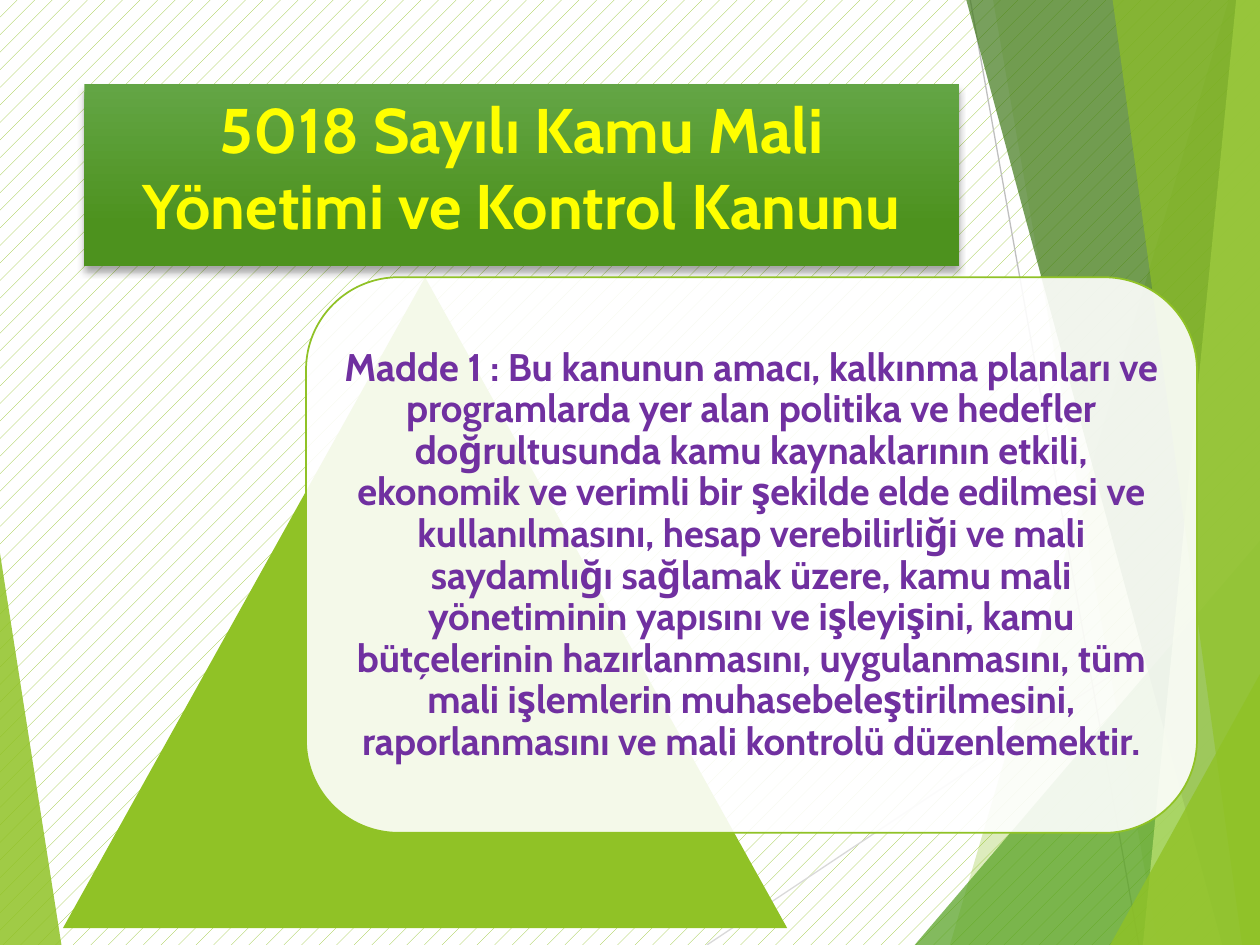
from dataclasses import dataclass

from lxml import etree
from pptx import Presentation
from pptx import util as u
from pptx.dml.color import RGBColor
from pptx.enum import dml, shapes, text
from pptx.oxml import ns

WIDTH, HEIGHT = 25.4, 19.05  # cm
CARD_TOP = 5.59
TRIANGLE_BASE = 18.71


@dataclass(frozen=True)
class Theme:
    font: str = "Cabin"
    title_size: int = 36
    body_size: int = 22
    white: str = "FFFFFF"
    lime: str = "90C226"
    pale_lime: str = "C0E474"
    green: str = "54A021"
    dark_green: str = "3F7819"
    title_top: str = "63A545"
    title_bottom: str = "4D921E"
    title_text: str = "FFFF00"
    body_text: str = "7030A0"
    light_grey: str = "D9D9D9"
    grey: str = "BFBFBF"
    black: str = "000000"


THEME = Theme()

TITLE = "5018 Sayılı Kamu Mali Yönetimi ve Kontrol Kanunu"
ARTICLE = (
    "Madde 1 : Bu kanunun amacı, kalkınma planları ve programlarda yer alan "
    "politika ve hedefler doğrultusunda kamu kaynaklarının etkili, ekonomik ve "
    "verimli bir şekilde elde edilmesi ve kullanılmasını, hesap verebilirliği ve "
    "mali saydamlığı sağlamak üzere, kamu mali yönetiminin yapısını ve "
    "işleyişini, kamu bütçelerinin hazırlanmasını, uygulanmasını, tüm mali "
    "işlemlerin muhasebeleştirilmesini, raporlanmasını ve mali kontrolü "
    "düzenlemektir."
)

# Thin lines behind the facets: start, end, colour
RAYS = [
    ((14.25, HEIGHT), (WIDTH, 11.61), THEME.light_grey),
    ((19.56, 0), (22.96, HEIGHT), THEME.grey),
]

# Facets: corner points, colour, opacity in percent
FACETS = [
    ([(0, 11.15), (1.24, HEIGHT), (0, HEIGHT)], THEME.lime, 85),
    ([(24.77, 0), (19.15, HEIGHT), (WIDTH, HEIGHT), (WIDTH, 0)], THEME.lime, 30),
    ([(20.02, 0), (23.34, HEIGHT), (WIDTH, HEIGHT), (WIDTH, 0)], THEME.lime, 20),
    ([(18.44, HEIGHT), (WIDTH, 10.9), (WIDTH, HEIGHT)], THEME.green, 72),
    ([(19.48, 0), (24.64, HEIGHT), (WIDTH, HEIGHT), (WIDTH, 0)], THEME.dark_green, 70),
    ([(24.92, 0), (23.04, HEIGHT), (WIDTH, HEIGHT), (WIDTH, 0)], THEME.pale_lime, 70),
    ([(22.43, 0), (25.04, HEIGHT), (WIDTH, HEIGHT), (WIDTH, 0)], THEME.lime, 65),
    ([(22.38, HEIGHT), (WIDTH, 13.59), (WIDTH, HEIGHT)], THEME.lime, 80),
]


def rgb(code):
    return RGBColor.from_string(code)


def lengths(*values):
    return [u.Cm(value) for value in values]


def fill_solid(shape, color, opacity=100):
    shape.shadow.inherit = False
    shape.fill.solid()
    shape.fill.fore_color.rgb = rgb(color)
    if opacity < 100:
        tint = shape._element.spPr.find(ns.qn("a:solidFill"))[0]
        etree.SubElement(tint, ns.qn("a:alpha"), val=str(opacity * 1000))


def set_background(page):
    fill = page.background.fill
    fill.patterned()
    fill.pattern = dml.MSO_PATTERN.PERCENT_5
    fill.fore_color.rgb = rgb(THEME.lime)
    fill.back_color.rgb = rgb(THEME.white)


def add_ray(page, start, end, color):
    ray = page.shapes.add_connector(
        shapes.MSO_CONNECTOR.STRAIGHT, *lengths(*start, *end))
    ray.line.color.rgb = rgb(color)
    ray.line.width = u.Pt(0.75)
    etree.SubElement(ray._element.spPr, ns.qn("a:effectLst"))


def add_facet(page, points, color, opacity):
    corners = [lengths(*point) for point in points]
    builder = page.shapes.build_freeform(*corners[0])
    builder.add_line_segments(corners[1:], close=True)
    facet = builder.convert_to_shape()
    fill_solid(facet, color, opacity)
    facet.line.fill.background()


def add_panel(page, preset, place, color, opacity=100, outline=None):
    panel = page.shapes.add_shape(preset, *lengths(*place))
    fill_solid(panel, color, opacity)
    if outline:
        panel.line.color.rgb = rgb(outline)
        panel.line.width = u.Pt(1)
    else:
        panel.line.fill.background()


def write(box, words, size, color, anchor, spacing):
    frame = box.text_frame
    frame.word_wrap = True
    frame.auto_size = text.MSO_AUTO_SIZE.NONE
    frame.vertical_anchor = anchor
    para = frame.paragraphs[0]
    para.alignment = text.PP_ALIGN.CENTER
    para.line_spacing = spacing
    span = para.add_run()
    span.text = words
    span.font.name = THEME.font
    span.font.size = u.Pt(size)
    span.font.bold = True
    span.font.color.rgb = rgb(color)
    return frame


def add_drop_shadow(shape):
    effects = etree.SubElement(shape._element.spPr, ns.qn("a:effectLst"))
    shadow = etree.SubElement(
        effects, ns.qn("a:outerShdw"), blurRad=str(u.Pt(4)), dist=str(u.Pt(3)),
        dir=str(90 * 60000), rotWithShape="0")
    tint = etree.SubElement(shadow, ns.qn("a:srgbClr"), val=THEME.black)
    etree.SubElement(tint, ns.qn("a:alpha"), val="35000")


def set_title(page):
    title = page.shapes.title
    title.left, title.top, title.width, title.height = lengths(1.7, 1.7, 17.63, 3.66)
    title.fill.gradient()
    title.fill.gradient_angle = 270
    stops = [(0, THEME.title_top), (0.78, THEME.title_bottom)]
    for stop, (position, color) in zip(title.fill.gradient_stops, stops):
        stop.position = position
        stop.color.rgb = rgb(color)
    add_drop_shadow(title)
    write(title, TITLE, THEME.title_size, THEME.title_text,
          text.MSO_ANCHOR.TOP, 1.0)


def add_article(page):
    box = page.shapes.add_textbox(*lengths(6.71, 6.15, 16.87, 10.11))
    frame = write(box, ARTICLE, THEME.body_size, THEME.body_text,
                  text.MSO_ANCHOR.MIDDLE, 0.9)
    frame.margin_left = frame.margin_right = u.Cm(0.23)
    frame.margin_top = frame.margin_bottom = u.Cm(0.23)


def main():
    deck = Presentation()
    deck.slide_width, deck.slide_height = lengths(WIDTH, HEIGHT)
    page = deck.slides.add_slide(deck.slide_layouts.get_by_name("Title Only"))

    # Backdrop
    set_background(page)
    for ray in RAYS:
        add_ray(page, *ray)
    for facet in FACETS:
        add_facet(page, *facet)

    # Title
    set_title(page)

    # Triangle, its tip level with the card's top edge and clear of the title
    add_panel(page, shapes.MSO_SHAPE.ISOSCELES_TRIANGLE,
              (1.27, CARD_TOP, 14.6, TRIANGLE_BASE - CARD_TOP), THEME.lime)

    # Article card
    add_panel(page, shapes.MSO_SHAPE.ROUNDED_RECTANGLE,
              (6.17, CARD_TOP, 17.96, 11.2), THEME.white, 90, THEME.lime)
    add_article(page)

    deck.save("out.pptx")


if __name__ == "__main__":
    main()
